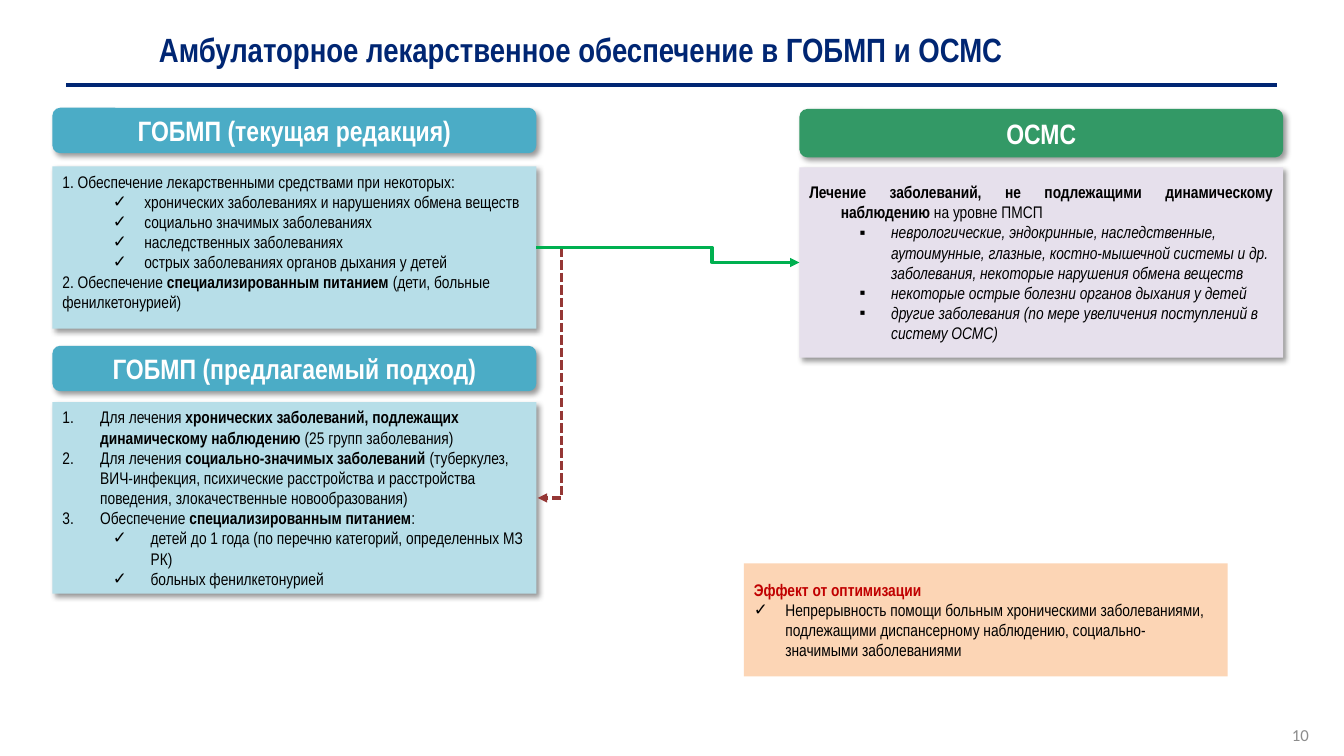
from dataclasses import dataclass
from typing import Optional

from lxml.etree import SubElement
from pptx import Presentation
from pptx.dml.color import RGBColor
from pptx.enum.dml import MSO_LINE
from pptx.enum.shapes import MSO_CONNECTOR, MSO_SHAPE
from pptx.enum.text import MSO_ANCHOR, PP_ALIGN
from pptx.oxml.ns import qn
from pptx.util import Pt


@dataclass(frozen=True)
class Theme:
    font: str = "Arial Narrow"
    number_font: str = "Calibri"
    title: float = 24
    header: float = 20
    body: float = 12
    navy: str = "002673"
    teal: str = "4BACC6"
    light_teal: str = "B7DEE8"
    green: str = "339966"
    lilac: str = "E6E0EC"
    peach: str = "FCD5B5"
    red: str = "C00000"
    arrow_green: str = "00B050"
    arrow_red: str = "953735"
    white: str = "FFFFFF"
    black: str = "000000"
    grey: str = "8C8C8C"


@dataclass(frozen=True)
class Run:
    text: str
    bold: bool = False
    italic: bool = False
    color: str = "000000"


@dataclass(frozen=True)
class Para:
    runs: tuple[Run, ...]
    level: int = 0
    margin: float = 0
    hanging: float = 0
    bullet: str = ""
    align: PP_ALIGN = PP_ALIGN.LEFT


@dataclass(frozen=True)
class Box:
    left: float
    top: float
    height: float
    fill: str
    paras: tuple[Para, ...]
    header: bool = False
    anchor: MSO_ANCHOR = MSO_ANCHOR.MIDDLE
    shadow: bool = True


T = Theme()
BOX_W = 345.6
LEFT_X, RIGHT_X, EFFECT_X = 37.5, 571, 531.4
CHECK, SQUARE, NUMBER = "✓", "▪", "1."
JUSTIFY = PP_ALIGN.JUSTIFY


def rgb(color: str) -> RGBColor:
    return RGBColor.from_string(color)


def add_bullet(p, bullet: str) -> None:
    pPr = p._p.get_or_add_pPr()
    if bullet == NUMBER:
        SubElement(pPr, qn("a:buFont"), typeface="+mj-lt")
        SubElement(pPr, qn("a:buAutoNum"), type="arabicPeriod")
    elif bullet:
        SubElement(pPr, qn("a:buFont"), typeface="Arial")
        SubElement(pPr, qn("a:buChar"), char=bullet)
    else:
        SubElement(pPr, qn("a:buNone"))


def write(tf, paras: tuple[Para, ...], *, size: float, font: str = T.font,
          anchor: MSO_ANCHOR = MSO_ANCHOR.MIDDLE) -> None:
    tf.word_wrap = True
    tf.vertical_anchor = anchor
    for i, para in enumerate(paras):
        p = tf.paragraphs[0] if i == 0 else tf.add_paragraph()
        p.alignment, p.level = para.align, para.level
        pPr = p._p.get_or_add_pPr()
        pPr.set("marL", str(Pt(para.margin)))
        pPr.set("indent", str(Pt(-para.hanging)))
        add_bullet(p, para.bullet)
        for run in para.runs:
            r = p.add_run()
            r.text = run.text
            r.font.name, r.font.size = font, Pt(size)
            r.font.bold, r.font.italic = run.bold, run.italic
            r.font.color.rgb = rgb(run.color)


def add_shadow(sp) -> None:
    effects = sp._element.spPr.find(qn("a:effectLst"))
    shadow = SubElement(effects, qn("a:outerShdw"), blurRad=str(Pt(4)), dist=str(Pt(3)),
                        dir=str(45 * 60000), algn="tl", rotWithShape="0")
    color = SubElement(shadow, qn("a:srgbClr"), val=T.black)
    SubElement(color, qn("a:alpha"), val="40000")


def add_box(slide, box: Box):
    kind = MSO_SHAPE.ROUNDED_RECTANGLE if box.header else MSO_SHAPE.RECTANGLE
    sp = slide.shapes.add_shape(kind, Pt(box.left), Pt(box.top), Pt(BOX_W), Pt(box.height))
    sp.shadow.inherit = False
    if box.shadow:
        add_shadow(sp)
    sp.fill.solid()
    sp.fill.fore_color.rgb = rgb(box.fill)
    sp.line.fill.background()
    write(sp.text_frame, box.paras, size=T.header if box.header else T.body, anchor=box.anchor)
    return sp


def add_line(slide, kind: MSO_CONNECTOR, x1: float, y1: float, x2: float, y2: float,
             color: str, width: float, bend: Optional[float] = None):
    """Draw a connector; bend is the distance from its start to its elbow."""
    cx = slide.shapes.add_connector(kind, Pt(x1), Pt(y1), Pt(x2), Pt(y2))
    cx.line.color.rgb, cx.line.width = rgb(color), Pt(width)
    SubElement(cx._element.spPr, qn("a:effectLst"))
    if bend is not None:
        ratio = round(bend / (x2 - x1) * 100000)
        guides = cx._element.spPr.find(qn("a:prstGeom")).get_or_add_avLst()
        SubElement(guides, qn("a:gd"), name="adj1", fmla=f"val {ratio}")
    return cx


def add_arrowhead(cx) -> None:
    SubElement(cx.line._get_or_add_ln(), qn("a:tailEnd"), type="triangle")


def add_text(slide, left: float, top: float, width: float, height: float,
             para: Para, size: float, font: str = T.font) -> None:
    tb = slide.shapes.add_textbox(Pt(left), Pt(top), Pt(width), Pt(height))
    write(tb.text_frame, (para,), size=size, font=font)


def heading(text: str) -> tuple[Para, ...]:
    return (Para((Run(text, bold=True, color=T.white),), align=PP_ALIGN.CENTER),)


def item(text: str, bullet: str, level: int = 2, margin: float = 58.5, hanging: float = 22.5,
         italic: bool = False, align: PP_ALIGN = PP_ALIGN.LEFT) -> Para:
    return Para((Run(text, italic=italic),), level, margin, hanging, bullet, align)


def numbered(before: str, strong: str, after: str) -> Para:
    return Para((Run(before), Run(strong, bold=True), Run(after)), 0, 27, 27, NUMBER)


CURRENT = (
    Para((Run("1. Обеспечение лекарственными средствами при некоторых:"),), 1, align=JUSTIFY),
    *(item(text, CHECK, align=JUSTIFY) for text in (
        "хронических заболеваниях и нарушениях обмена веществ",
        "социально значимых заболеваниях",
        "наследственных заболеваниях",
        "острых заболеваниях органов дыхания у детей")),
    Para((Run("2. Обеспечение "), Run("специализированным питанием ", bold=True),
          Run("(дети, больные фенилкетонурией)"))),
)
PROPOSED = (
    numbered("Для лечения ", "хронических заболеваний, подлежащих динамическому наблюдению ",
             "(25 групп заболевания)"),
    numbered("Для лечения ", "социально-значимых заболеваний ",
             "(туберкулез, ВИЧ-инфекция, психические расстройства и расстройства поведения, "
             "злокачественные новообразования)"),
    numbered("Обеспечение ", "специализированным питанием", ":"),
    *(item(text, CHECK, 1, 63, 27) for text in (
        "детей до 1 года (по перечню категорий, определенных МЗ РК)",
        "больных фенилкетонурией")),
)
INSURANCE = (
    Para((Run("Лечение заболеваний, не подлежащими динамическому наблюдению ", bold=True),
          Run("на уровне ПМСП")), 1, 22.5, 22.5, align=JUSTIFY),
    *(item(text, SQUARE, italic=True) for text in (
        "неврологические, эндокринные, наследственные, аутоимунные, глазные, "
        "костно-мышечной системы и др. заболевания, некоторые нарушения обмена веществ",
        "некоторые острые болезни органов дыхания у детей",
        "другие заболевания (по мере увеличения поступлений в систему ОСМС)")),
)
EFFECT = (
    Para((Run("Эффект от оптимизации", bold=True, color=T.red),)),
    item("Непрерывность помощи больным хроническими заболеваниями, подлежащими диспансерному "
         "наблюдению, социально-значимыми заболеваниями", CHECK, 0, 22.5),
)
TOP = MSO_ANCHOR.TOP
BOXES = {
    "current_header": Box(LEFT_X, 77, 32.4, T.teal, heading("ГОБМП (текущая редакция)"), True),
    "current": Box(LEFT_X, 118.8, 116, T.light_teal, CURRENT, anchor=TOP),
    "proposed_header": Box(LEFT_X, 247, 32.4, T.teal, heading("ГОБМП (предлагаемый подход)"), True),
    "proposed": Box(LEFT_X, 287.3, 136.8, T.light_teal, PROPOSED, anchor=TOP),
    "insurance_header": Box(RIGHT_X, 77.8, 34.6, T.green, heading("ОСМС"), True),
    "insurance": Box(RIGHT_X, 119.5, 136, T.lilac, INSURANCE),
    "effect": Box(EFFECT_X, 402.5, 80.6, T.peach, EFFECT, shadow=False),
}


def main() -> None:
    prs = Presentation()
    prs.slide_width, prs.slide_height = Pt(960), Pt(540)
    slide = prs.slides.add_slide(prs.slide_layouts[6])

    # Title, rule and page number
    add_text(slide, 106.5, 13, 623.5, 44, Para((Run(
        "Амбулаторное лекарственное обеспечение в ГОБМП и ОСМС", bold=True, color=T.navy),)), T.title)
    add_line(slide, MSO_CONNECTOR.STRAIGHT, 47.5, 60.5, 912.5, 60.5, T.navy, 3)
    add_text(slide, 718, 510.5, 224, 28.8,
             Para((Run("10", color=T.grey),), align=PP_ALIGN.RIGHT), T.body, T.number_font)

    # Headers and content boxes
    shapes = {name: add_box(slide, box) for name, box in BOXES.items()}

    # Arrows from the current package to the proposed one and to insurance
    right_edge = LEFT_X + BOX_W
    mid = {name: box.top + box.height / 2 for name, box in BOXES.items()}
    dashed = add_line(slide, MSO_CONNECTOR.ELBOW, right_edge, mid["current"],
                      right_edge + 1, mid["proposed"], T.arrow_red, 2.25, bend=18)
    dashed.line.dash_style = MSO_LINE.SQUARE_DOT
    add_arrowhead(dashed)
    solid = add_line(slide, MSO_CONNECTOR.ELBOW, right_edge, mid["current"],
                     RIGHT_X, mid["insurance"], T.arrow_green, 2.25, bend=125.5)
    solid.begin_connect(shapes["current"], 3)
    solid.end_connect(shapes["insurance"], 1)
    add_arrowhead(solid)

    prs.save("out.pptx")


if __name__ == "__main__":
    main()
